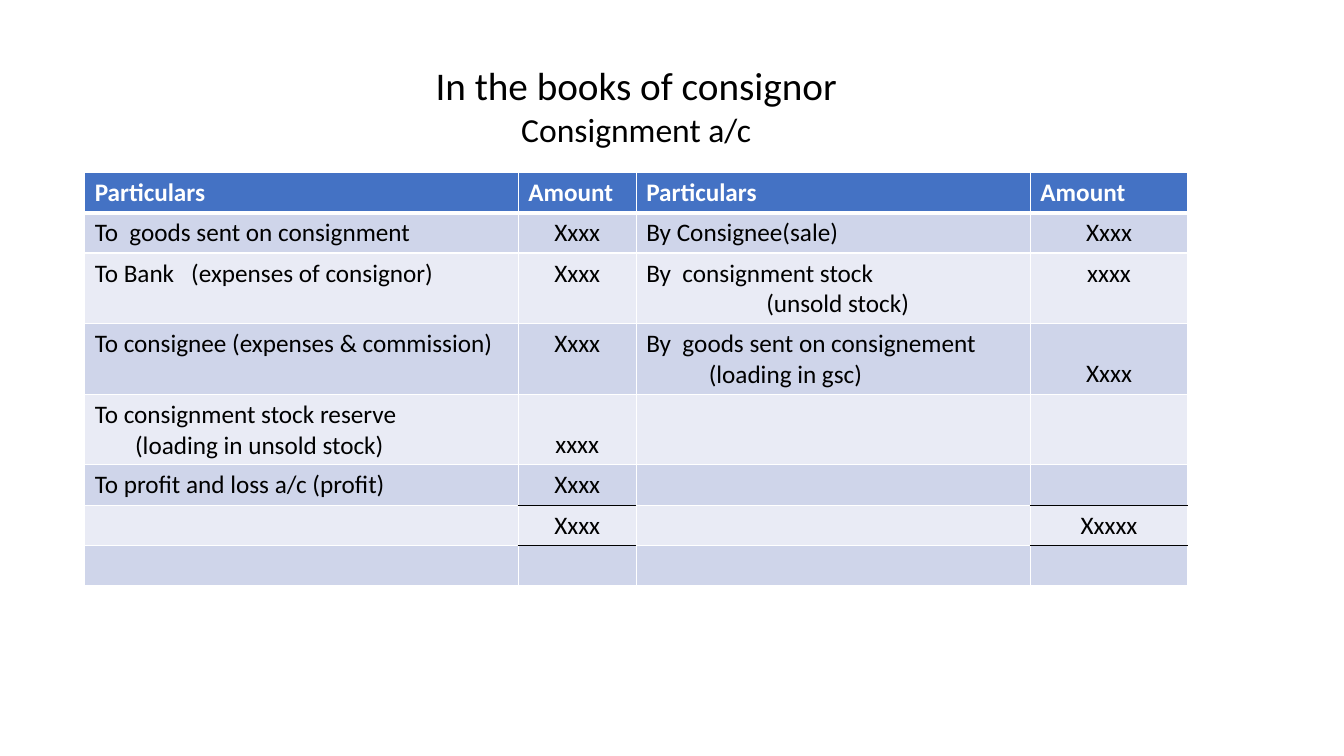
from dataclasses import dataclass

from lxml.etree import SubElement
from pptx import Presentation
from pptx.dml.color import RGBColor
from pptx.enum.text import MSO_ANCHOR, MSO_AUTO_SIZE, PP_ALIGN
from pptx.oxml.ns import qn
from pptx.util import Inches, Pt

BLACK, WHITE, HEADER_BLUE = "000000", "FFFFFF", "4472C4"
BAND_FILLS = ("CFD5EA", "E9EBF5")
COLUMN_WIDTHS = (4.3, 1.17, 3.91, 1.56)
ONE_LINE, TWO_LINES = 0.4, 0.7
AMOUNT_COLUMNS = (1, 3)
TOTAL_ROW = 6


@dataclass(frozen=True)
class Entry:
    text: str = ""
    detail: str = ""  # second line
    indent: float = 0  # left margin of the second line, in inches
    at_bottom: bool = False


LEDGER = [
    [Entry("Particulars"), Entry("Amount"), Entry("Particulars"), Entry("Amount")],
    [Entry("To  goods sent on consignment"), Entry("Xxxx"),
     Entry("By Consignee(sale)"), Entry("Xxxx")],
    [Entry("To Bank   (expenses of consignor)"), Entry("Xxxx"),
     Entry("By  consignment stock", "(unsold stock)", 1.19), Entry("xxxx")],
    [Entry("To consignee (expenses & commission)"), Entry("Xxxx"),
     Entry("By  goods sent on consignement", "(loading in gsc)", 0.62),
     Entry("Xxxx", at_bottom=True)],
    [Entry("To consignment stock reserve", "(loading in unsold stock)", 0.4),
     Entry("xxxx", at_bottom=True), Entry(), Entry()],
    [Entry("To profit and loss a/c (profit)"), Entry("Xxxx"), Entry(), Entry()],
    [Entry(), Entry("Xxxx"), Entry(), Entry("Xxxxx")],
    [Entry(), Entry(), Entry(), Entry()],
]


def color(value: str) -> RGBColor:
    return RGBColor.from_string(value)


def write(paragraph, text: str, size: float, text_color: str = BLACK,
          bold: bool = False, alignment=PP_ALIGN.LEFT) -> None:
    paragraph.alignment = alignment
    run = paragraph.add_run()
    run.text = text
    font_format = {"name": "Calibri", "size": Pt(size), "bold": bold}
    for name, value in font_format.items():
        setattr(run.font, name, value)
    run.font.color.rgb = color(text_color)


def horizontal_rule(row_above: int, column: int) -> tuple[str, float]:
    """Colour and width of the line below a row."""
    if row_above == 0:
        return WHITE, 3
    if column in AMOUNT_COLUMNS and row_above in (TOTAL_ROW - 1, TOTAL_ROW):
        return BLACK, 1
    return WHITE, 1


def draw_borders(cell, row: int, column: int) -> None:
    properties = cell._tc.get_or_add_tcPr()
    borders = {
        "a:lnL": (WHITE, 1),
        "a:lnR": (WHITE, 1),
        "a:lnT": horizontal_rule(row - 1, column),
        "a:lnB": horizontal_rule(row, column),
    }
    for tag, (line_color, width) in borders.items():
        line = SubElement(properties, qn(tag), w=str(Pt(width)))
        fill = SubElement(line, qn("a:solidFill"))
        SubElement(fill, qn("a:srgbClr"), val=line_color)


def fill_cell(cell, entry: Entry, row: int, column: int) -> None:
    is_header = row == 0
    draw_borders(cell, row, column)
    cell.fill.solid()
    cell.fill.fore_color.rgb = color(HEADER_BLUE if is_header else BAND_FILLS[(row - 1) % 2])
    cell.vertical_anchor = MSO_ANCHOR.BOTTOM if entry.at_bottom else MSO_ANCHOR.TOP
    if not entry.text:
        return
    centred = column in AMOUNT_COLUMNS and not is_header
    write(cell.text_frame.paragraphs[0], entry.text, 18,
          WHITE if is_header else BLACK, is_header,
          PP_ALIGN.CENTER if centred else PP_ALIGN.LEFT)
    if entry.detail:
        paragraph = cell.text_frame.add_paragraph()
        write(paragraph, entry.detail, 18)
        paragraph._p.get_or_add_pPr().set("marL", str(Inches(entry.indent)))


def add_heading(slide) -> None:
    heading = slide.shapes.add_textbox(Inches(1.56), Inches(0.56), Inches(9.5), Inches(0.98))
    frame = heading.text_frame
    frame_format = {"word_wrap": True, "auto_size": MSO_AUTO_SIZE.SHAPE_TO_FIT_TEXT}
    for name, value in frame_format.items():
        setattr(frame, name, value)
    write(frame.paragraphs[0], "In the books of consignor", 28, alignment=PP_ALIGN.CENTER)
    write(frame.add_paragraph(), "Consignment a/c", 24, alignment=PP_ALIGN.CENTER)


def add_ledger(slide) -> None:
    heights = [TWO_LINES if any(entry.detail for entry in entries) else ONE_LINE
               for entries in LEDGER]
    table = slide.shapes.add_table(
        len(LEDGER), len(COLUMN_WIDTHS), Inches(0.84), Inches(1.71),
        Inches(sum(COLUMN_WIDTHS)), Inches(sum(heights))).table
    for column, width in zip(table.columns, COLUMN_WIDTHS):
        column.width = Inches(width)
    for row, height in zip(table.rows, heights):
        row.height = Inches(height)
    for row_index, entries in enumerate(LEDGER):
        for column_index, entry in enumerate(entries):
            fill_cell(table.cell(row_index, column_index), entry, row_index, column_index)


def main() -> None:
    presentation = Presentation()
    presentation.slide_width = Inches(13.33)
    presentation.slide_height = Inches(7.5)
    slide = presentation.slides.add_slide(presentation.slide_layouts[6])
    # Heading above the account
    add_heading(slide)
    # Consignment account
    add_ledger(slide)
    presentation.save("out.pptx")


if __name__ == "__main__":
    main()
